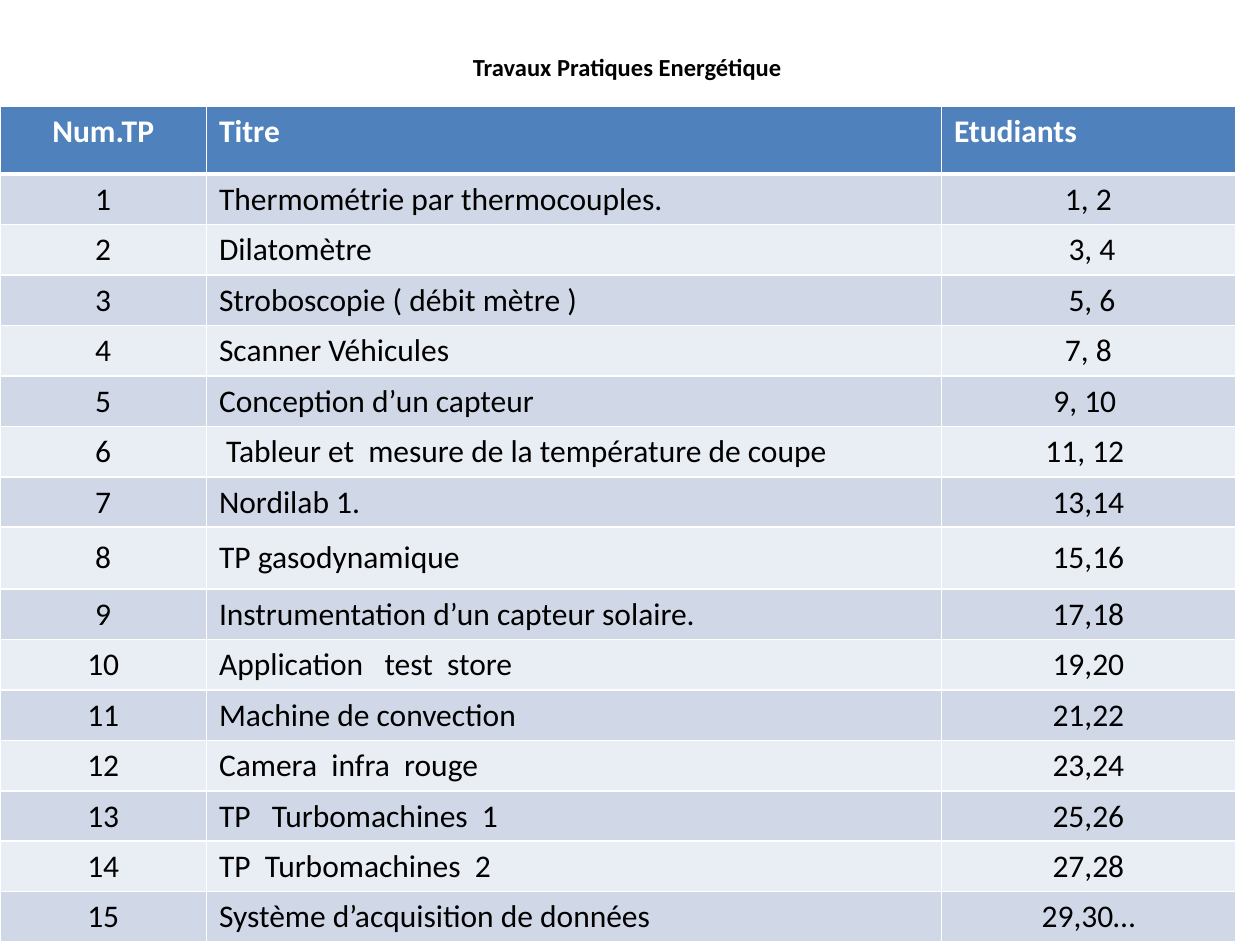
from dataclasses import dataclass, field

from lxml.etree import SubElement
from pptx import Presentation
from pptx.dml.color import RGBColor
from pptx.enum.text import MSO_ANCHOR as Anchor, PP_ALIGN as Align
from pptx.oxml.ns import qn
from pptx.slide import Slide
from pptx.util import Pt

COLORS = {
    "text": "000000",
    "white": "FFFFFF",
    "header": "4F81BD",
    "odd": "D0D8E8",
    "even": "E9EDF4",
}
HEADINGS = ("Num.TP", "Titre", "Etudiants")
PRACTICALS = [
    ("Thermométrie par thermocouples.", "1, 2"),
    ("Dilatomètre", " 3, 4"),
    ("Stroboscopie ( débit mètre )", " 5, 6"),
    ("Scanner Véhicules", "7, 8"),
    ("Conception d’un capteur", "9, 10 "),
    (" Tableur et  mesure de la température de coupe", "11, 12 "),
    ("Nordilab 1.", "13,14"),
    ("TP gasodynamique", "15,16"),
    ("Instrumentation d’un capteur solaire.", "17,18"),
    ("Application   test  store", "19,20"),
    ("Machine de convection", "21,22"),
    ("Camera  infra  rouge", "23,24"),
    ("TP   Turbomachines  1", "25,26"),
    ("TP  Turbomachines  2", "27,28"),
    ("Système d’acquisition de données", "29,30…"),
]
COLUMN_WIDTHS = (118, 420, 168)
HEADER_HEIGHT, ROW_HEIGHT, TALL_HEIGHT = 39, 28, 35.3
TALL_ROW = 8


@dataclass
class SlideBuilder:
    """Draws styled text and tables on the current slide."""

    slide: Slide
    font: str = "Calibri"
    colors: dict = field(default_factory=lambda: COLORS)

    def add_text(self, paragraph, text, align, color, **formats):
        paragraph.alignment = align
        run = paragraph.add_run()
        run.text = text
        for name, value in {"name": self.font, **formats}.items():
            setattr(run.font, name, value)
        run.font.color.rgb = RGBColor.from_string(self.colors[color])

    def title(self, text, left, top, width, height):
        shape = self.slide.shapes.add_textbox(*map(Pt, (left, top, width, height)))
        frame = shape.text_frame
        formats = {"word_wrap": True, "vertical_anchor": Anchor.MIDDLE}
        for name, value in formats.items():
            setattr(frame, name, value)
        self.add_text(frame.paragraphs[0], text, Align.CENTER, "text", size=Pt(14), bold=True)

    def borders(self, cell, bottom):
        properties = cell._tc.get_or_add_tcPr()
        fill = properties[0]
        for side, width in {"lnL": 1, "lnR": 1, "lnT": 1, "lnB": bottom}.items():
            line = SubElement(properties, qn(f"a:{side}"), w=str(Pt(width)))
            solid = SubElement(line, qn("a:solidFill"))
            SubElement(solid, qn("a:srgbClr"), val=self.colors["white"])
        properties.append(fill)

    def cell(self, cell, text, align, is_header, fill):
        cell.fill.solid()
        cell.fill.fore_color.rgb = RGBColor.from_string(self.colors[fill])
        cell.vertical_anchor = Anchor.TOP if is_header else Anchor.MIDDLE
        color = "white" if is_header else "text"
        paragraph = cell.text_frame.paragraphs[0]
        self.add_text(paragraph, text, align, color, size=Pt(18), bold=is_header)
        self.borders(cell, 3 if is_header else 1)

    def table(self, rows, left, top, widths, heights):
        bounds = map(Pt, (left, top, sum(widths), sum(heights)))
        table = self.slide.shapes.add_table(len(rows), len(widths), *bounds).table
        for column, width in zip(table.columns, widths):
            column.width = Pt(width)
        for number, (values, height) in enumerate(zip(rows, heights)):
            table.rows[number].height = Pt(height)
            is_header = number == 0
            fill = "header" if is_header else "odd" if number % 2 else "even"
            last_align = Align.LEFT if is_header else Align.CENTER
            aligns = (Align.CENTER, Align.LEFT, last_align)
            for index, (text, align) in enumerate(zip(values, aligns)):
                self.cell(table.cell(number, index), text, align, is_header, fill)


def main():
    presentation = Presentation()
    for name, value in {"slide_width": 720, "slide_height": 540}.items():
        setattr(presentation, name, Pt(value))
    builder = SlideBuilder(presentation.slides.add_slide(presentation.slide_layouts[6]))
    builder.title("Travaux Pratiques Energétique ", 36, 21.6, 648, 33)
    rows = [HEADINGS]
    rows += [(str(number), *entry) for number, entry in enumerate(PRACTICALS, 1)]
    heights = [HEADER_HEIGHT] + [ROW_HEIGHT] * len(PRACTICALS)
    heights[TALL_ROW] = TALL_HEIGHT
    builder.table(rows, 0, 60.5, COLUMN_WIDTHS, heights)
    presentation.save("out.pptx")


if __name__ == "__main__":
    main()
